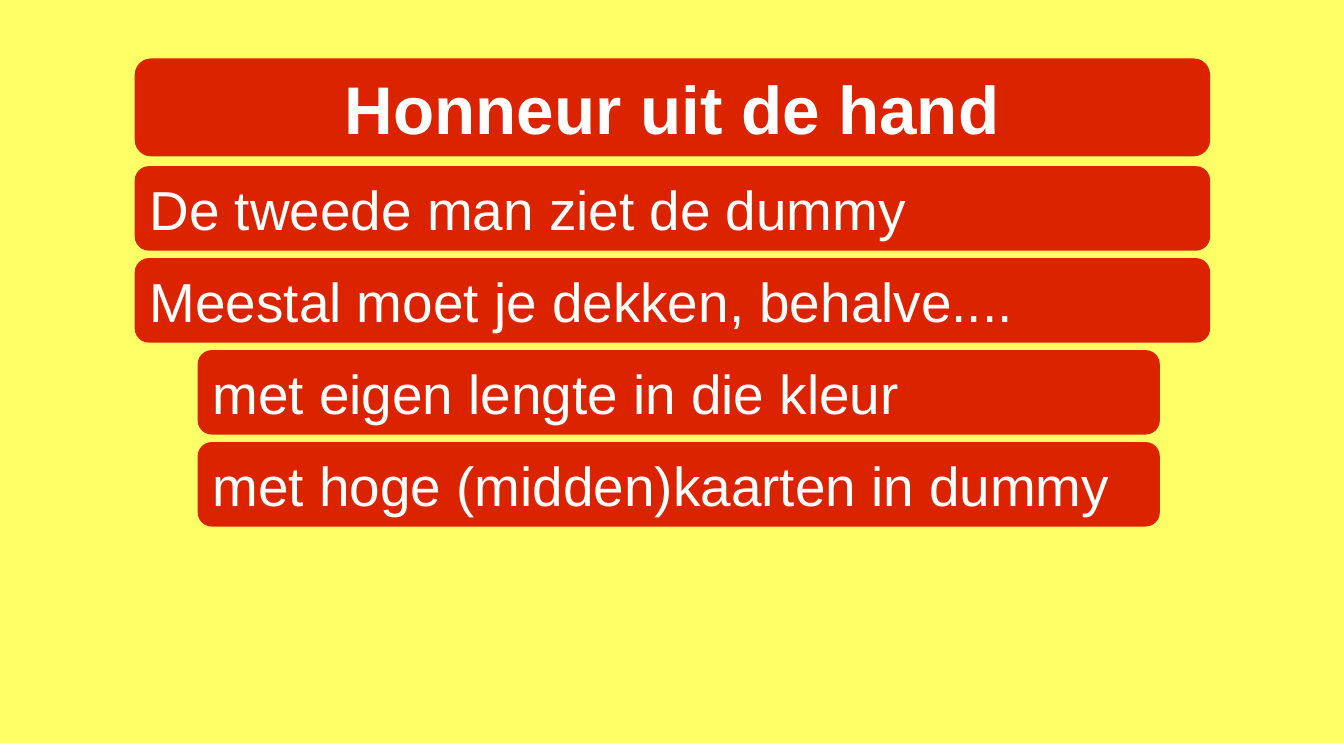
"""Build a slide on covering an honour, with a title bar and four text bars."""
from pptx import Presentation
from pptx.dml.color import RGBColor
from pptx.enum.shapes import MSO_SHAPE
from pptx.enum.text import MSO_ANCHOR, MSO_AUTO_SIZE, PP_ALIGN
from pptx.util import Pt


def tint(code):
    return RGBColor.from_string(code)


def put(frame, text, size=44, bold=False, align=PP_ALIGN.LEFT, wrap=True):
    frame.auto_size = MSO_AUTO_SIZE.NONE
    frame.word_wrap = wrap
    frame.vertical_anchor = MSO_ANCHOR.MIDDLE
    frame.margin_left = frame.margin_right = Pt(8.64)
    frame.margin_top = frame.margin_bottom = Pt(4.32)
    para = frame.paragraphs[0]
    para.alignment = align
    run = para.add_run()
    run.text = text
    run.font.name = "Arial"
    run.font.size = Pt(size)
    run.font.bold = bold
    run.font.color.rgb = tint("FFFFFF")


deck = Presentation()
deck.slide_width, deck.slide_height = Pt(1077.12), Pt(595.44)
slide = deck.slides.add_slide(deck.slide_layouts[5])
slide.background.fill.solid()
slide.background.fill.fore_color.rgb = tint("FFFF66")

WIDE = (108, 861.84)
NEAR = (158.4, 771.12)
TOP, STEP, HIGH = 133.2, 73.7, 67.68
head = (WIDE[0], 46.8, WIDE[1], 78.48)
lines = [
    (WIDE, "De tweede man ziet de dummy"),
    (WIDE, "Meestal moet je dekken, behalve...."),
    (NEAR, "met eigen lengte in die kleur"),
    (NEAR, "met hoge (midden)kaarten in dummy"),
]
bars = [(head, "")]
for row, ((left, width), text) in enumerate(lines):
    bars.append(((left, TOP + row * STEP, width, HIGH), text))

for box, text in bars:
    bar = slide.shapes.add_shape(MSO_SHAPE.ROUNDED_RECTANGLE, *map(Pt, box))
    bar.adjustments[0] = 0.167
    bar.shadow.inherit = False
    bar.fill.solid()
    bar.fill.fore_color.rgb = tint("DC2300")
    bar.line.fill.background()
    if text:
        put(bar.text_frame, text)

title = slide.shapes.title
title.left, title.top, title.width, title.height = map(Pt, head)
put(title.text_frame, "Honneur uit de hand", size=54, bold=True,
    align=PP_ALIGN.CENTER, wrap=False)
slide.shapes.element.append(title.element)

deck.save("out.pptx")
